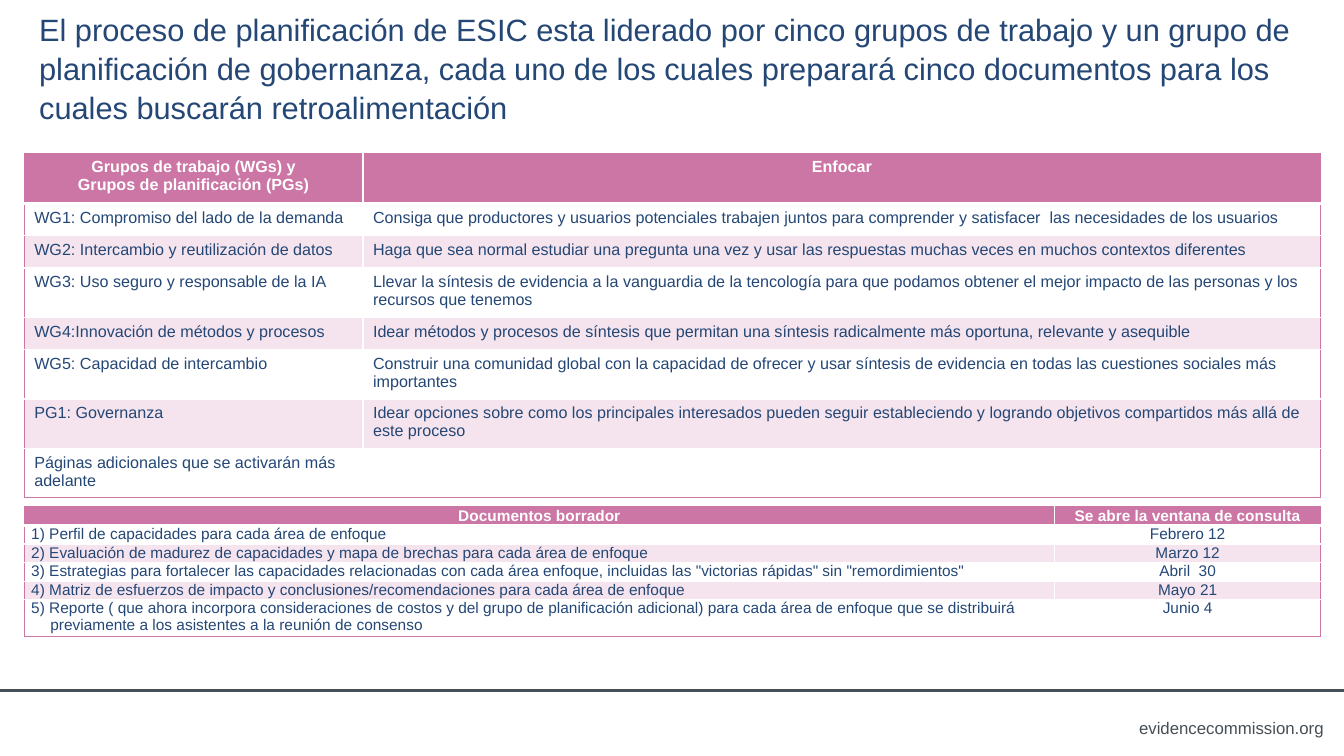
from pptx import Presentation
from pptx.dml.color import RGBColor
from pptx.enum.shapes import MSO_CONNECTOR as Conn
from pptx.enum.text import MSO_ANCHOR as Anchor, PP_ALIGN as Align
from pptx.oxml.xmlchemy import OxmlElement as Elem
from pptx.util import Inches, Pt

PINK = RGBColor(0xCC, 0x76, 0xA6)
PALE = RGBColor(0xF5, 0xE4, 0xED)
WHITE = RGBColor(0xFF, 0xFF, 0xFF)
NAVY = RGBColor(0x24, 0x47, 0x76)
GREY = RGBColor(0x46, 0x4F, 0x55)


def write(para, text, size, color, bold=False):
    for i, part in enumerate(text.split("\n")):
        if i:
            para.add_line_break()
        run = para.add_run()
        run.text = part
        run.font.name = "Arial"
        run.font.size = Pt(size)
        run.font.bold = bold
        run.font.color.rgb = color


def edge(cell, side, color, width):
    line = Elem("a:ln" + side)
    line.set("w", str(Pt(width)))
    fill = Elem("a:solidFill")
    tint = Elem("a:srgbClr")
    tint.set("val", str(color))
    fill.append(tint)
    line.append(fill)
    cell._tc.get_or_add_tcPr().append(line)


deck = Presentation()
deck.slide_width = Inches(13.33)
deck.slide_height = Inches(7.5)
slide = deck.slides.add_slide(deck.slide_layouts[6])
shapes = slide.shapes

rule = shapes.add_connector(Conn.STRAIGHT, 0, Inches(6.85), Inches(13.33), Inches(6.85))
rule.line.color.rgb = GREY
rule.line.width = Pt(2)
rule._element.spPr.append(Elem("a:effectLst"))

site = shapes.add_textbox(Inches(11.17), Inches(7.07), Inches(2.06), Inches(0.3))
site.text_frame.word_wrap = True
para = site.text_frame.paragraphs[0]
para.alignment = Align.RIGHT
write(para, "evidencecommission.org", 12, GREY)

title = shapes.add_textbox(Inches(0.29), Inches(0.12), Inches(12.8), Inches(1.1))
title.text_frame.word_wrap = True
title.text_frame.vertical_anchor = Anchor.MIDDLE
para = title.text_frame.paragraphs[0]
para.line_spacing = 1.05
write(para, "El proceso de planificación de ESIC esta liderado por cinco grupos de trabajo y un grupo de planificación de gobernanza, cada uno de los cuales preparará cinco documentos para los cuales buscarán retroalimentación", 22, NAVY)

groups = [
    ("Grupos de trabajo (WGs) y\nGrupos de planificación (PGs)", "Enfocar"),
    ("WG1: Compromiso del lado de la demanda",
     "Consiga que productores y usuarios potenciales trabajen juntos para comprender y satisfacer  las necesidades de los usuarios"),
    ("WG2: Intercambio y reutilización de datos",
     "Haga que sea normal estudiar una pregunta una vez y usar las respuestas muchas veces en muchos contextos diferentes"),
    ("WG3: Uso seguro y responsable de la IA",
     "Llevar la síntesis de evidencia a la vanguardia de la tencología para que podamos obtener el mejor impacto de las personas y los recursos que tenemos"),
    ("WG4:Innovación de métodos y procesos",
     "Idear métodos y procesos de síntesis que permitan una síntesis radicalmente más oportuna, relevante y asequible"),
    ("WG5: Capacidad de intercambio",
     "Construir una comunidad global con la capacidad de ofrecer y usar síntesis de evidencia en todas las cuestiones sociales más importantes"),
    ("PG1: Governanza",
     "Idear opciones sobre como los principales interesados pueden seguir estableciendo y logrando objetivos compartidos más allá de este proceso"),
    ("Páginas adicionales que se activarán más adelante", ""),
]
drafts = [
    ("Documentos borrador", "Se abre la ventana de consulta"),
    ("1) Perfil de capacidades para cada área de enfoque", "Febrero 12"),
    ("2) Evaluación de madurez de capacidades y mapa de brechas para cada área de enfoque", "Marzo 12"),
    ("3) Estrategias para fortalecer las capacidades relacionadas con cada área enfoque, incluidas las \"victorias rápidas\" sin \"remordimientos\"", "Abril  30"),
    ("4) Matriz de esfuerzos de impacto y conclusiones/recomendaciones para cada área de enfoque", "Mayo 21"),
    ("5) Reporte ( que ahora incorpora consideraciones de costos y del grupo de planificación adicional) para cada área de enfoque que se distribuirá previamente a los asistentes a la reunión de consenso", "Junio 4"),
]
tables = [
    (groups, 1.52, (3.36, 9.5), (0.5, 0.32, 0.32, 0.49, 0.32, 0.49, 0.49, 0.49), 11.5, False),
    (drafts, 5.03, (10.22, 2.64), (0.18, 0.17, 0.17, 0.17, 0.17, 0.34), 11, True),
]

for data, top, widths, heights, size, tight in tables:
    frame = shapes.add_table(len(data), 2, Inches(0.24), Inches(top),
                             Inches(sum(widths)), Inches(sum(heights)))
    grid = frame.table
    for col, width in zip(grid.columns, widths):
        col.width = Inches(width)
    last = len(data) - 1
    for r, texts in enumerate(data):
        grid.rows[r].height = Inches(heights[r])
        head = r == 0
        for c, text in enumerate(texts):
            cell = grid.cell(r, c)
            edge(cell, "L", WHITE if c else PINK, 1)
            edge(cell, "R", PINK if c else WHITE, 1)
            edge(cell, "T", PINK if head else WHITE, 3 if r == 1 else 1)
            edge(cell, "B", PINK if r == last else WHITE, 3 if head else 1)
            cell.fill.solid()
            cell.fill.fore_color.rgb = PINK if head else WHITE if r % 2 else PALE
            if r == last:
                cell.fill.fore_color.rgb = WHITE
            para = cell.text_frame.paragraphs[0]
            if tight:
                cell.margin_left = cell.margin_right = Inches(0.07)
                cell.margin_top = cell.margin_bottom = 0
                if head:
                    cell.vertical_anchor = Anchor.MIDDLE
                if r == last and c == 0:
                    props = para._p.get_or_add_pPr()
                    props.set("marL", str(Inches(0.19)))
                    props.set("indent", str(Inches(-0.19)))
            if head or (tight and c):
                para.alignment = Align.CENTER
            if text:
                write(para, text, size, WHITE if head else NAVY, head)

deck.save("out.pptx")
